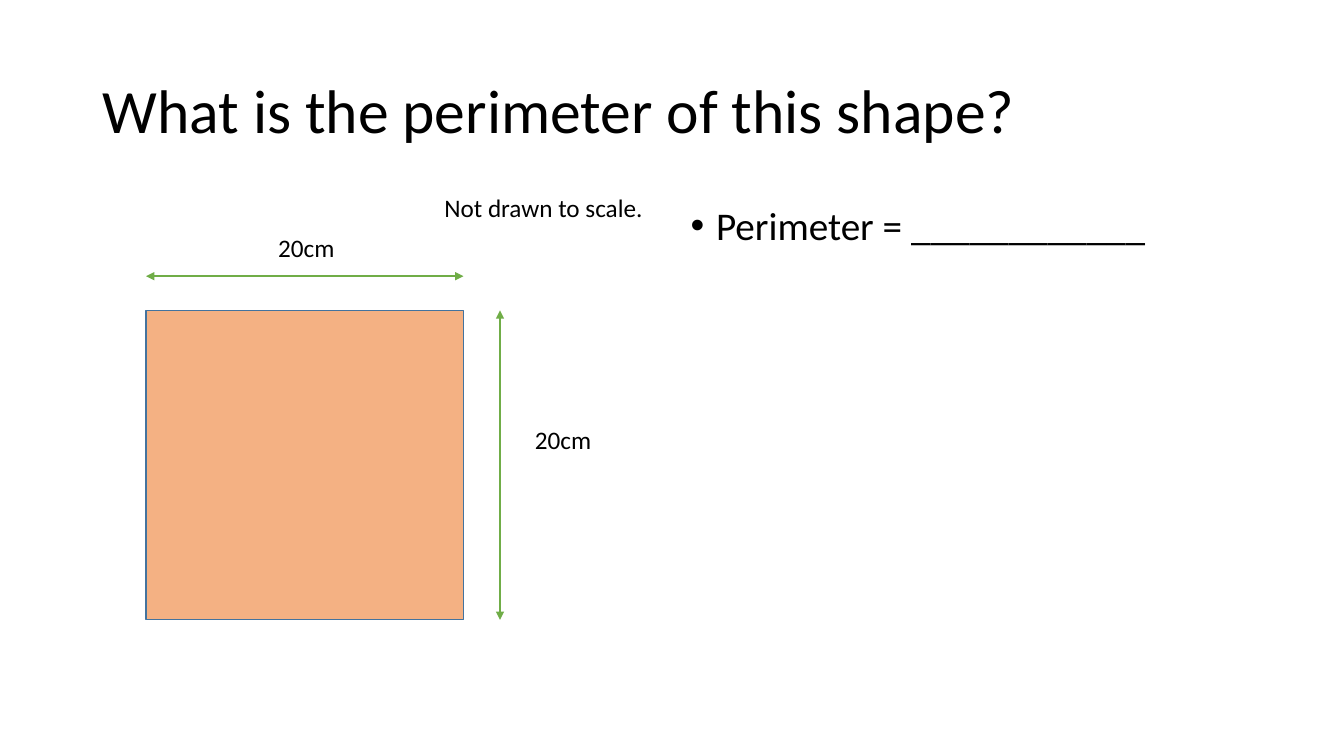
from lxml import etree
from pptx import Presentation
from pptx.dml.color import RGBColor
from pptx.enum import shapes, text
from pptx.oxml.ns import qn
from pptx.util import Cm, Pt

BLACK, GREEN, ORANGE, BLUE = "000000", "70AD47", "F4B183", "43739E"
LEFT, TOP, WIDTH, HEIGHT = 3.68, 7.82, 8, 7.8


def colour(value):
    """Turn a hex string into a colour."""
    return RGBColor.from_string(value)


def write(paragraph, wording, size):
    """Add one left-aligned run in the slide's font."""
    paragraph.alignment = text.PP_ALIGN.LEFT
    paragraph.space_before = Pt(0)
    run = paragraph.add_run()
    run.text = wording
    run.font.name = "Calibri"
    run.font.size = Pt(size)
    run.font.color.rgb = colour(BLACK)


def fill_placeholder(holder, wording, size, place, anchor):
    """Move a placeholder, write its text and return its paragraph."""
    holder.left, holder.top, holder.width, holder.height = map(Cm, place)
    frame = holder.text_frame
    frame.word_wrap = True
    frame.auto_size = text.MSO_AUTO_SIZE.NONE
    frame.vertical_anchor = anchor
    paragraph = frame.paragraphs[0]
    paragraph.line_spacing = 0.9
    write(paragraph, wording, size)
    return paragraph


def add_bullet(paragraph):
    """Give a paragraph a round bullet with a hanging indent."""
    properties = paragraph._p.get_or_add_pPr()
    properties.set("marL", str(Cm(0.64)))
    properties.set("indent", str(-Cm(0.64)))
    etree.SubElement(properties, qn("a:buFont")).set("typeface", "Arial")
    etree.SubElement(properties, qn("a:buChar")).set("char", "•")


def add_label(slide, wording, left, top, width):
    """Add a one-line label."""
    label = slide.shapes.add_textbox(Cm(left), Cm(top), Cm(width), Cm(1.03))
    label.text_frame.word_wrap = False
    label.text_frame.auto_size = text.MSO_AUTO_SIZE.SHAPE_TO_FIT_TEXT
    write(label.text_frame.paragraphs[0], wording, 18)


def add_square(slide):
    """Draw the shape to be measured."""
    square = slide.shapes.add_shape(
        shapes.MSO_SHAPE.RECTANGLE, Cm(LEFT), Cm(TOP), Cm(WIDTH), Cm(HEIGHT))
    square.shadow.inherit = False
    square.fill.solid()
    square.fill.fore_color.rgb = colour(ORANGE)
    square.line.color.rgb = colour(BLUE)
    square.line.width = Pt(1)


def add_dimension(slide, *ends):
    """Draw a double-headed measuring arrow."""
    dimension = slide.shapes.add_connector(
        shapes.MSO_CONNECTOR.STRAIGHT, *map(Cm, ends))
    dimension.line.color.rgb = colour(GREEN)
    dimension.line.width = Pt(1.5)
    outline = dimension.line._get_or_add_ln()
    for end in ("a:headEnd", "a:tailEnd"):
        etree.SubElement(outline, qn(end)).set("type", "triangle")
    etree.SubElement(dimension._element.spPr, qn("a:effectLst"))


def main():
    """Build and save the perimeter question."""
    deck = Presentation()
    deck.slide_width, deck.slide_height = Cm(33.87), Cm(19.05)
    slide = deck.slides.add_slide(deck.slide_layouts[1])
    fill_placeholder(slide.shapes.title, "What is the perimeter of this shape?", 44,
                     (2.33, 1.01, 29.21, 3.68), text.MSO_ANCHOR.MIDDLE)
    answer = fill_placeholder(slide.placeholders[1], "Perimeter = ____________", 28,
                              (17.15, 5.07, 14.4, 12.09), text.MSO_ANCHOR.TOP)
    add_bullet(answer)
    add_square(slide)
    height_x, width_y = 12.6, 6.96
    add_dimension(slide, height_x, TOP, height_x, TOP + HEIGHT)
    add_dimension(slide, LEFT, width_y, LEFT + WIDTH, width_y)
    add_label(slide, "Not drawn to scale.", 10.95, 4.72, 5.72)
    add_label(slide, "20cm", 6.76, 5.74, 1.96)
    add_label(slide, "20cm", 13.23, 10.57, 1.96)
    deck.save("out.pptx")


if __name__ == "__main__":
    main()
